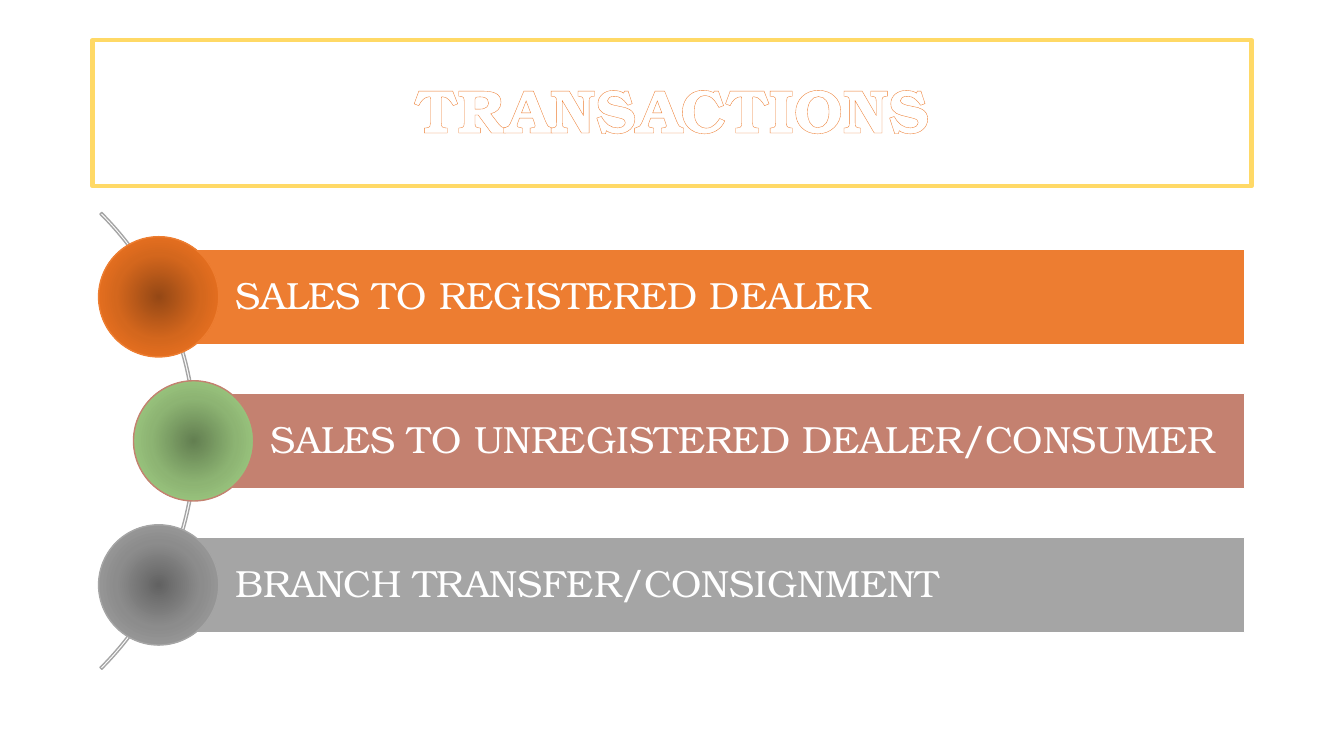
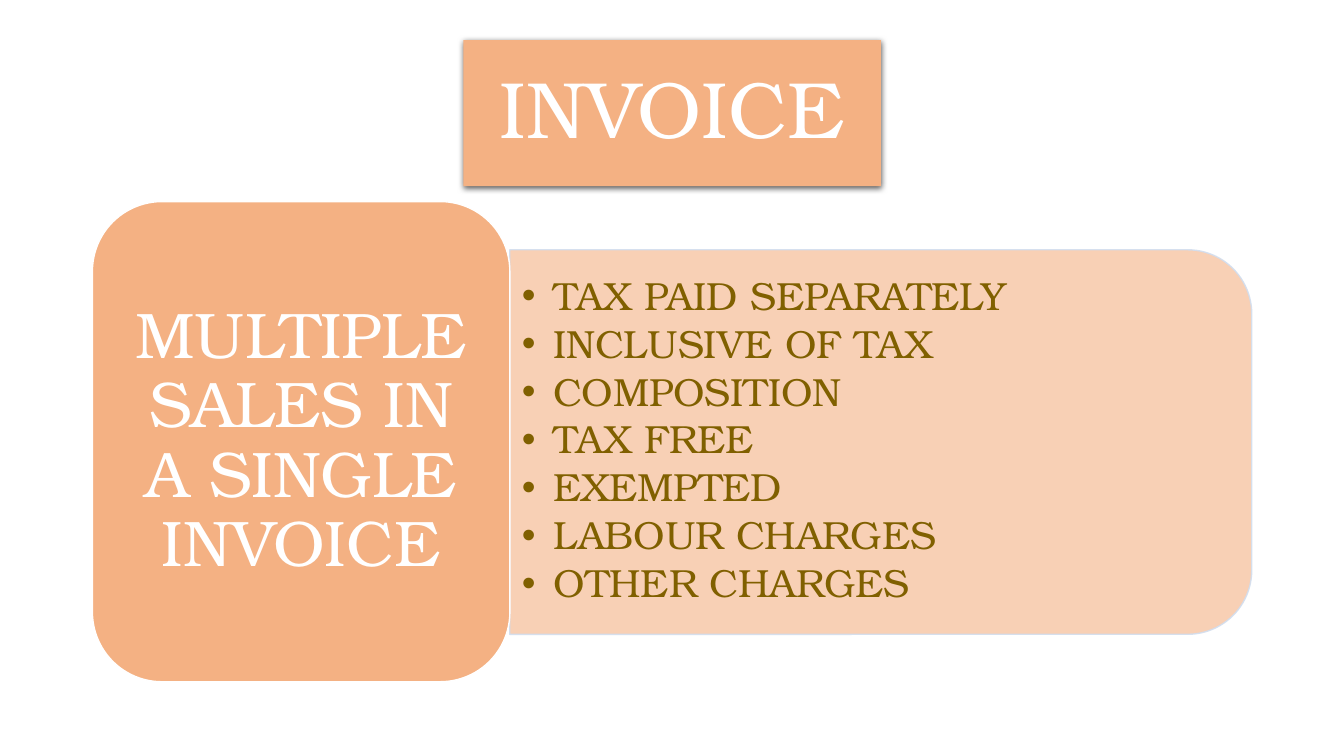
from lxml.etree import SubElement
from pptx import Presentation
from pptx.dml.color import RGBColor
from pptx.enum.shapes import MSO_SHAPE
from pptx.enum.text import MSO_ANCHOR, MSO_AUTO_SIZE, PP_ALIGN
from pptx.oxml import parse_xml
from pptx.oxml.ns import nsdecls, qn
from pptx.util import Cm, Pt

# Shared style
FONT = "TeX Gyre Bonum"
WHITE, ORANGE, GREY, GOLD = "FFFFFF", "ED7D31", "A5A5A5", "FFD966"
PEACH, PANEL, PANEL_EDGE, OLIVE = "F4B183", "F8CBAD", "D2DEEF", "806000"
TITLE_TOP, TITLE_H = 1.01, 3.68
LEFT = 2.33

# Transactions: label, column of the dot, bar colour, gradient from centre to rim
TRANSACTIONS = [
    ("SALES TO REGISTERED DEALER", 0, ORANGE, ("954815", "D4671D", "FB7A23")),
    ("SALES TO UNREGISTERED DEALER/CONSUMER", 1, "C48170", ("637F51", "8DB473", "A8D689")),
    ("BRANCH TRANSFER/CONSIGNMENT", 0, GREY, ("626262", "8C8C8C", "A6A6A6")),
]
CHARGES = ["TAX PAID SEPARATELY", "INCLUSIVE OF TAX", "COMPOSITION", "TAX FREE",
           "EXEMPTED", "LABOUR CHARGES", "OTHER CHARGES"]


def rgb(code):
    return RGBColor.from_string(code)


def apply(obj, values):
    for name, value in values.items():
        setattr(obj, name, value)


def place(sp, left, top, width, height):
    apply(sp, {"left": Cm(left), "top": Cm(top), "width": Cm(width), "height": Cm(height)})


def paint(sp, fill=None, line=None, width=1):
    for part, color in ((sp.fill, fill), (sp.line.fill, line)):
        if color:
            part.solid()
            part.fore_color.rgb = rgb(color)
        else:
            part.background()
    if line:
        sp.line.width = Pt(width)


def add_shape(s, kind, box, fill=None, line=None):
    sp = s.shapes.add_shape(kind, *(Cm(v) for v in box))
    sp.shadow.inherit = False
    paint(sp, fill, line)
    return sp


def write(sp, lines, size, color=WHITE, align=PP_ALIGN.LEFT, insets=(0.25, 0.13), bold=False, after=0):
    """Fill a shape with one paragraph per line; insets are left/right and top/bottom."""
    tf = sp.text_frame
    side, edge = (Cm(v) for v in insets)
    apply(tf, {"word_wrap": True, "auto_size": MSO_AUTO_SIZE.NONE,
               "vertical_anchor": MSO_ANCHOR.MIDDLE, "margin_left": side,
               "margin_right": side, "margin_top": edge, "margin_bottom": edge})
    for i, line in enumerate(lines):
        p = tf.add_paragraph() if i else tf.paragraphs[0]
        apply(p, {"alignment": align, "line_spacing": 0.9,
                  "space_before": Pt(0), "space_after": Pt(after)})
        r = p.add_run()
        r.text = line
        apply(r.font, {"name": FONT, "size": Pt(size), "bold": bold})
        r.font.color.rgb = rgb(color)
    return tf


def add_title(s, text, left, width, size, **style):
    sp = s.shapes.title
    place(sp, left, TITLE_TOP, width, TITLE_H)
    write(sp, [text], size, align=PP_ALIGN.CENTER, insets=(0.6, 0.13), **style)
    return sp


def outline_text(r, color, width):
    r.font._element.insert(0, parse_xml(
        f'<a:ln {nsdecls("a")} w="{Pt(width)}"><a:solidFill>'
        f'<a:srgbClr val="{color}"/></a:solidFill></a:ln>'))


def radial_fill(sp, colors):
    stops = "".join(f'<a:gs pos="{i * 50000}"><a:srgbClr val="{c}"/></a:gs>'
                    for i, c in enumerate(colors))
    old = sp._element.spPr.find(qn("a:solidFill"))
    old.getparent().replace(old, parse_xml(
        f'<a:gradFill {nsdecls("a")}><a:gsLst>{stops}</a:gsLst><a:path path="circle">'
        '<a:fillToRect l="50000" t="50000" r="50000" b="50000"/></a:path></a:gradFill>'))


def set_opacity(sp, percent):
    for color in sp._element.spPr.iter(qn("a:srgbClr")):
        SubElement(color, qn("a:alpha"), val=str(percent * 1000))


def round_with_shadow(sp):
    """Give a placed and painted placeholder rounded corners and a soft shadow."""
    spPr = sp._element.spPr
    spPr.find(qn("a:xfrm")).addnext(parse_xml(
        f'<a:prstGeom {nsdecls("a")} prst="roundRect"><a:avLst/></a:prstGeom>'))
    spPr.append(parse_xml(
        f'<a:effectLst {nsdecls("a")}><a:outerShdw blurRad="{Pt(4.5)}" dist="{Pt(1.5)}" '
        'dir="5400000" algn="ctr" rotWithShape="0"><a:srgbClr val="000000">'
        '<a:alpha val="63000"/></a:srgbClr></a:outerShdw></a:effectLst>'))


def add_transaction(s, row, label, column, color, gradient):
    """Bar that starts at the centre of its dot."""
    x, y = 4 + 0.88 * column, 7.48 + 3.63 * row
    bar_h, dot, right = 2.4, 3.03, 31.37
    bar = add_shape(s, MSO_SHAPE.RECTANGLE, (x, y - bar_h / 2, right - x, bar_h), color, WHITE)
    tf = write(bar, [label], 27, insets=(0.18, 0.18))
    tf.margin_left = Cm(1.93)
    sp = add_shape(s, MSO_SHAPE.OVAL, (x - dot / 2, y - dot / 2, dot, dot), color, color)
    radial_fill(sp, gradient)


def transactions_slide(prs):
    s = prs.slides.add_slide(prs.slide_layouts[5])
    title = add_title(s, "TRANSACTIONS", LEFT, 29.21, 44, bold=True)
    paint(title, line=GOLD, width=3)
    outline_text(title.text_frame.paragraphs[0].runs[0], ORANGE, 0.52)

    # Arc behind the dots
    arc = add_shape(s, MSO_SHAPE.BLOCK_ARC, (-11.33, 2.97, 16.28, 16.28), line=GREY)
    for i, value in enumerate((189, 27, 0.004)):
        arc.adjustments[i] = value

    for row, item in enumerate(TRANSACTIONS):
        add_transaction(s, row, *item)


def invoice_slide(prs):
    s = prs.slides.add_slide(prs.slide_layouts[1])
    card_w = 10.52
    title = add_title(s, "INVOICE", 11.68, card_w, 57)
    paint(title, PEACH)
    round_with_shadow(title)

    # Panel on its side, rounded at the right
    panel = add_shape(s, MSO_SHAPE.ROUND_2_SAME_RECTANGLE, (17.35, 1.79, 9.69, 18.7),
                      PANEL, PANEL_EDGE)
    panel.rotation = 90
    set_opacity(panel, 90)

    # List, brought in front of the panel
    body = s.placeholders[1]
    place(body, LEFT + card_w, 6.75, 18.21, 8.74)
    tf = write(body, CHARGES, 28, OLIVE, insets=(0.3, 0.15), after=4)
    for p in tf.paragraphs:
        pPr = p._p.get_or_add_pPr()
        pPr.set("marL", str(Cm(0.79)))
        pPr.set("indent", str(-Cm(0.79)))
    panel._element.addnext(body._element)

    card = add_shape(s, MSO_SHAPE.ROUNDED_RECTANGLE, (LEFT, 5.08, card_w, 12.1), PEACH, WHITE)
    write(card, ["MULTIPLE SALES IN A SINGLE INVOICE"], 46,
          align=PP_ALIGN.CENTER, insets=(0.35, 0.3))


def main():
    prs = Presentation()
    apply(prs, {"slide_width": Cm(33.87), "slide_height": Cm(19.05)})
    transactions_slide(prs)
    invoice_slide(prs)
    prs.save("out.pptx")


if __name__ == "__main__":
    main()
